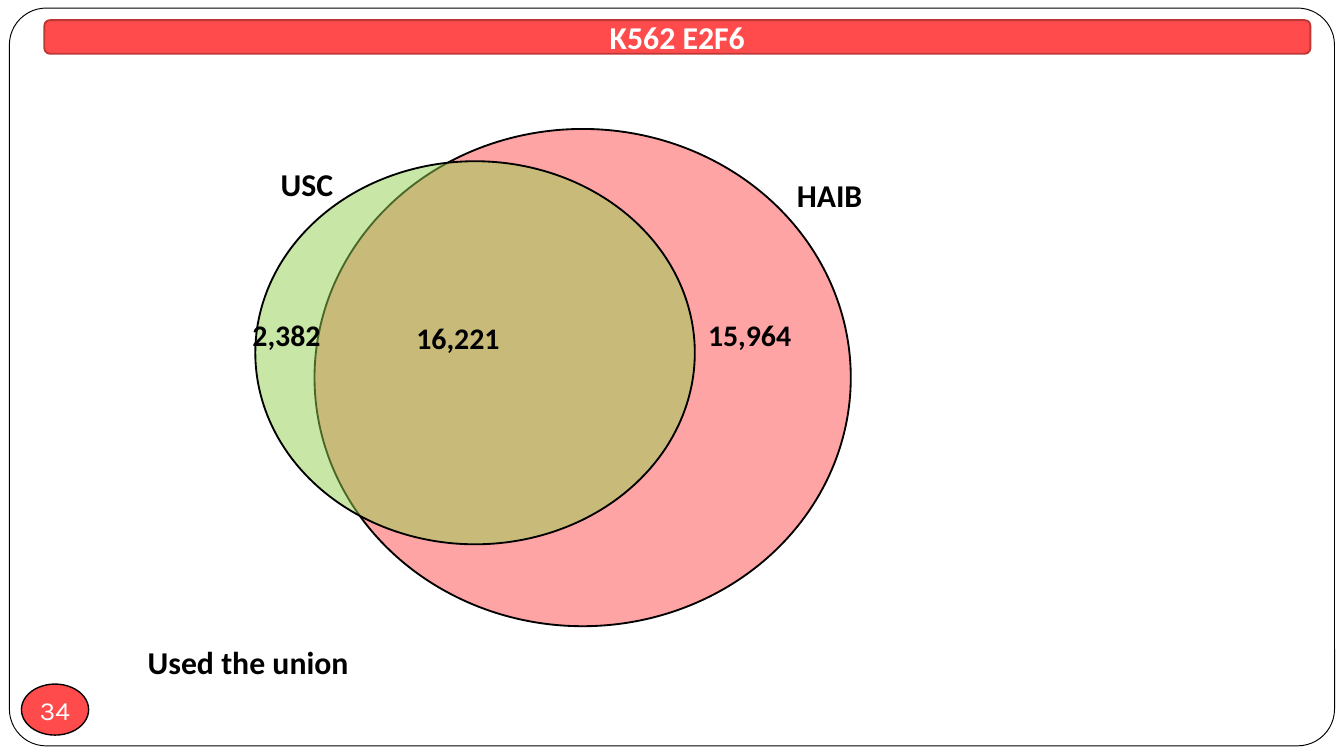
"""Build the K562 E2F6 slide: a two-set Venn diagram with peak counts."""
from lxml import etree
from pptx import Presentation, util as u
from pptx.dml.color import RGBColor
from pptx.enum import shapes, text
from pptx.oxml.ns import qn

WHITE = RGBColor(0xFF, 0xFF, 0xFF)
BLACK = RGBColor(0, 0, 0)
RED = RGBColor(0xFF, 0x4B, 0x4B)
DARK_RED = RGBColor(0xBD, 0x37, 0x37)
GREEN = RGBColor(0x92, 0xD0, 0x50)
ROUNDED = shapes.MSO_SHAPE.ROUNDED_RECTANGLE
OVAL = shapes.MSO_SHAPE.OVAL

WIDTH = 10
HEIGHT = WIDTH * 9 / 16
MARGIN = 0.07
TITLE = "K562 E2F6"
PAGE = "34"
SETS = [
    ((2.34, 0.96, 3.99, 3.7), RED),
    ((1.9, 1.2, 3.27, 2.85), GREEN),
]
COUNT_SIZE, LABEL_SIZE = 16, 17
LABELS = [
    ("16,221", (3, 2.33, 0.83, 0.37), COUNT_SIZE),
    ("15,964", (5.17, 2.31, 0.83, 0.37), COUNT_SIZE),
    ("2,382", (1.78, 2.31, 0.72, 0.37), COUNT_SIZE),
    ("USC", (1.99, 1.18, 0.6, 0.39), LABEL_SIZE),
    ("HAIB", (5.83, 1.26, 0.69, 0.39), LABEL_SIZE),
    ("Used the union", (1, 4.73, 1.71, 0.39), LABEL_SIZE),
]


def inches(box):
    return [u.Inches(length) for length in box]


def write(holder, words, size, color=BLACK, font="Calibri", bold=True):
    frame = holder.text_frame
    frame.text = words
    style = frame.paragraphs[0].runs[0].font
    style.name, style.size, style.bold = font, u.Pt(size), bold
    style.color.rgb = color
    return frame


def center(frame):
    frame.vertical_anchor = text.MSO_ANCHOR.MIDDLE
    frame.paragraphs[0].alignment = text.PP_ALIGN.CENTER


def add_outline(slide, kind, box, fill, line, weight, opacity=100):
    outline = slide.shapes.add_shape(kind, *inches(box))
    outline.shadow.inherit = False
    outline.fill.solid()
    outline.fill.fore_color.rgb = fill
    outline.line.color.rgb = line
    outline.line.width = u.Pt(weight)
    if opacity < 100:
        tint = outline.fill._xPr.find(qn("a:solidFill"))[0]
        etree.SubElement(tint, qn("a:alpha"), val=str(opacity * 1000))
    return outline


def main():
    deck = Presentation()
    deck.slide_width, deck.slide_height = inches((WIDTH, HEIGHT))
    slide = deck.slides.add_slide(deck.slide_layouts[6])

    card = (MARGIN, 0.06, WIDTH - 2 * MARGIN, 5.49)
    frame = add_outline(slide, ROUNDED, card, WHITE, BLACK, 0.5)
    frame.adjustments[0] = 0.05

    badge = add_outline(slide, OVAL, (0.16, 5.09, 0.5, 0.38), RED, BLACK, 0.75)
    number = write(badge, PAGE, 14, WHITE, "Karla", False)
    number.margin_left = number.margin_right = 0
    number.margin_top = number.margin_bottom = 0
    number.word_wrap = False
    center(number)

    banner = add_outline(slide, ROUNDED, (0.33, 0.15, 9.42, 0.25), RED, DARK_RED, 1)
    center(write(banner, TITLE, LABEL_SIZE, WHITE))

    for box, color in SETS:
        add_outline(slide, OVAL, box, color, BLACK, 1, opacity=50)

    for words, box, size in LABELS:
        label = write(slide.shapes.add_textbox(*inches(box)), words, size)
        label.word_wrap = False
        label.auto_size = text.MSO_AUTO_SIZE.SHAPE_TO_FIT_TEXT

    deck.save("out.pptx")


if __name__ == "__main__":
    main()
